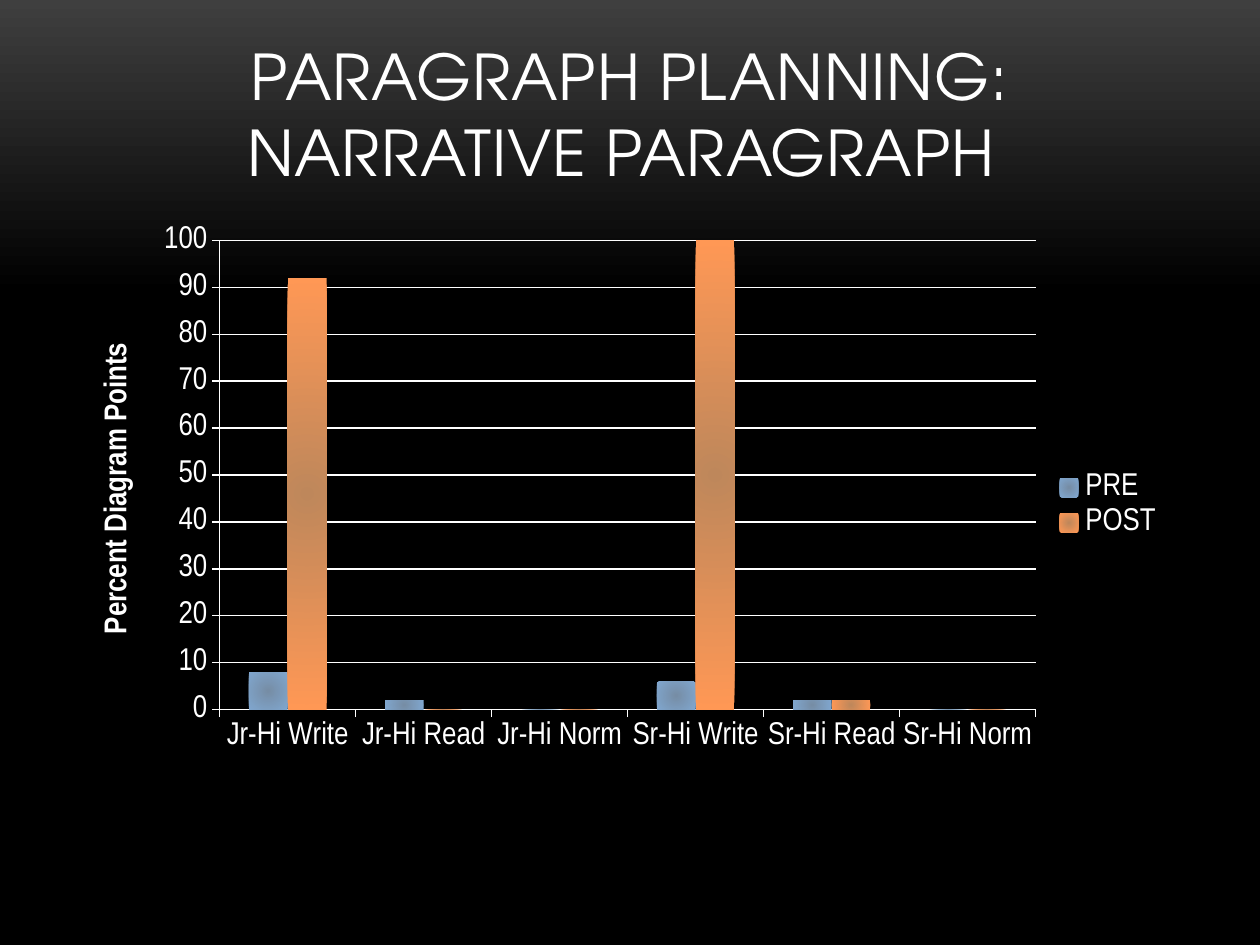
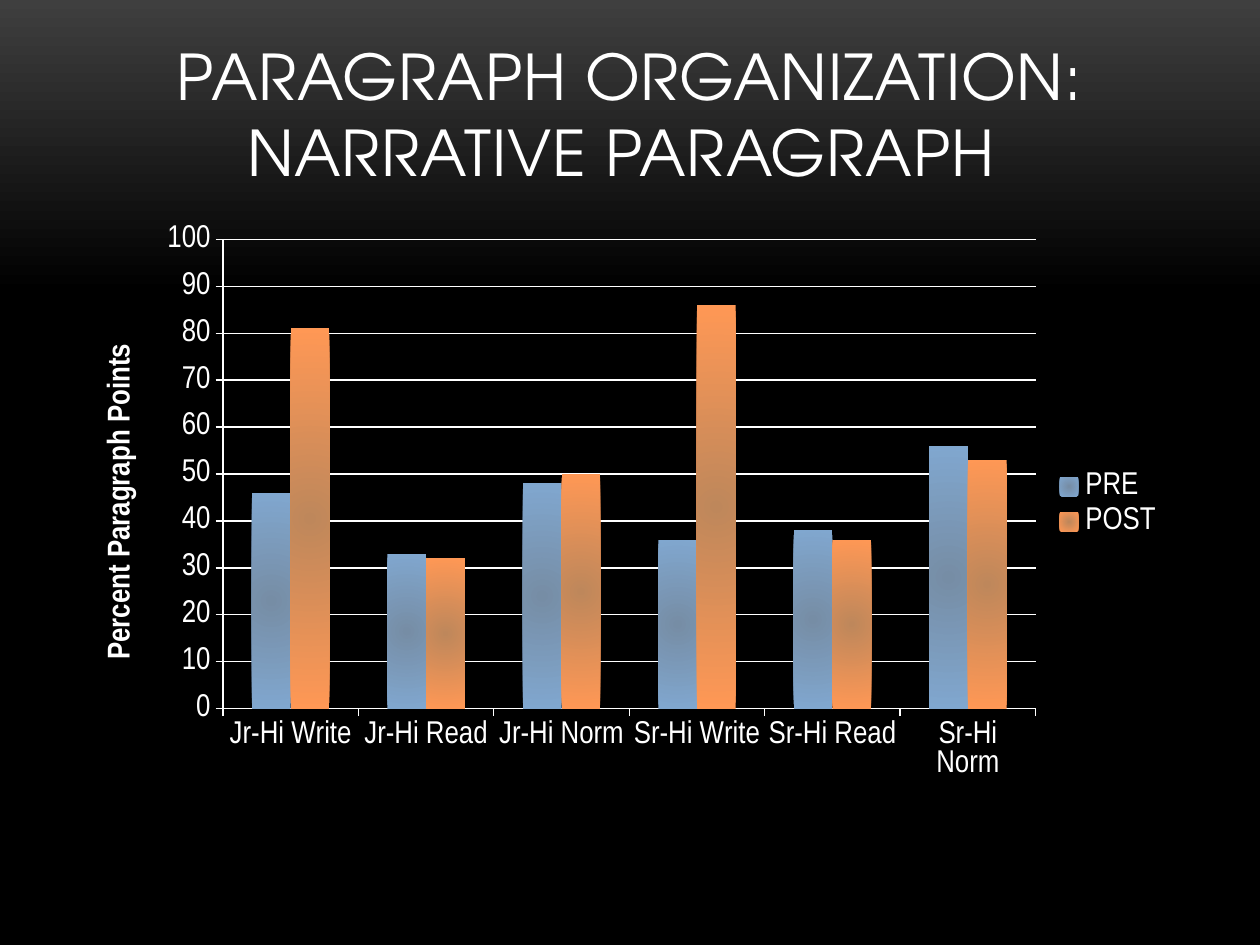
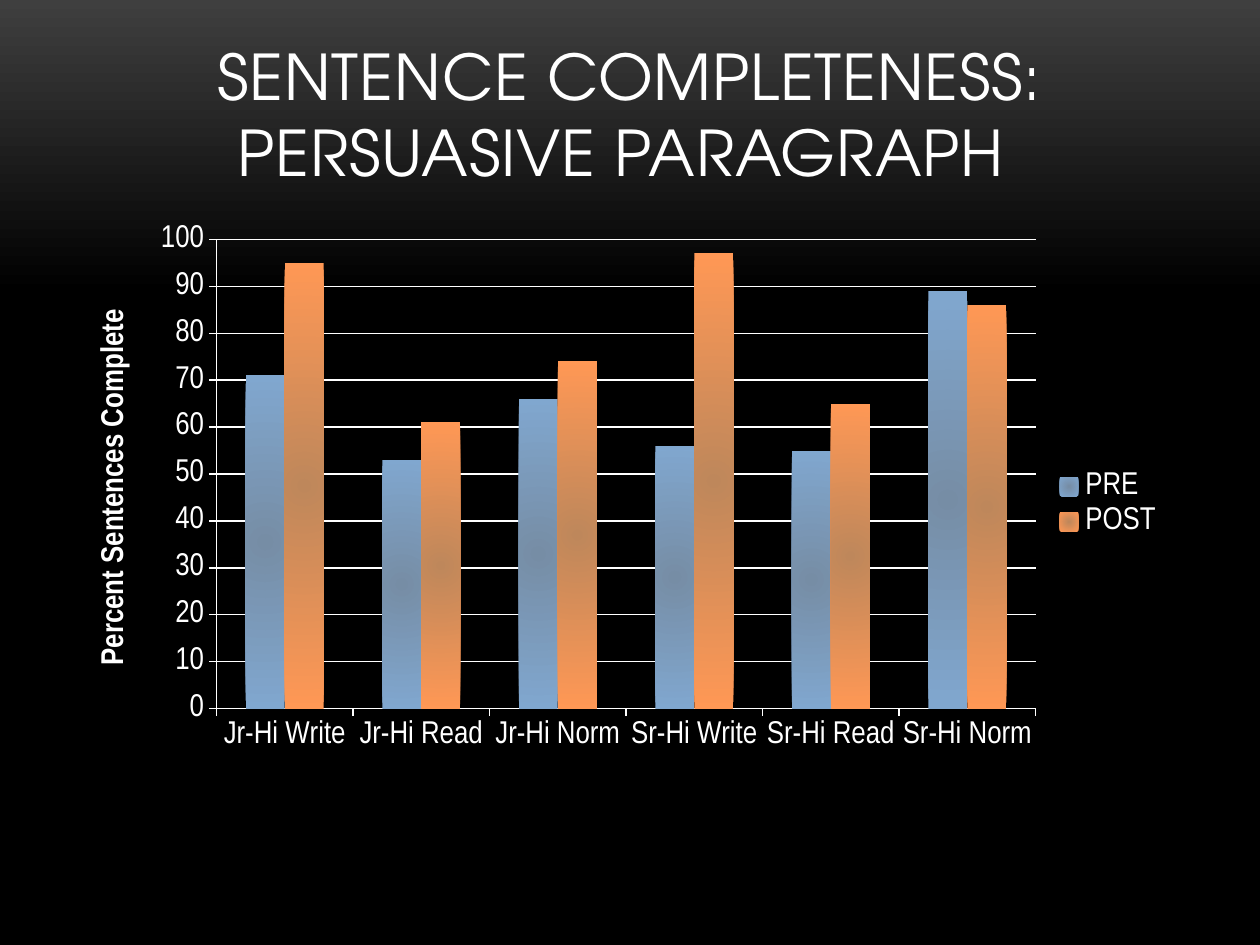
from dataclasses import dataclass

from pptx import Presentation
from pptx.chart.data import CategoryChartData
from pptx.dml.color import RGBColor
from pptx.enum.chart import XL_CHART_TYPE, XL_LEGEND_POSITION, XL_TICK_MARK
from pptx.enum.text import MSO_ANCHOR, PP_ALIGN
from pptx.oxml import parse_xml
from pptx.oxml.ns import nsdecls
from pptx.util import Cm, Pt


@dataclass(frozen=True)
class Theme:
    white: RGBColor = RGBColor(0xFF, 0xFF, 0xFF)
    gray: RGBColor = RGBColor(0x3F, 0x3F, 0x3F)
    black: RGBColor = RGBColor(0, 0, 0)
    # Centre and edge of each bar's radial fill
    pre: tuple = (RGBColor(0x76, 0x8D, 0xA5), RGBColor(0x80, 0xA7, 0xCF))
    post: tuple = (RGBColor(0xBE, 0x87, 0x5B), RGBColor(0xFF, 0x98, 0x55))
    head: str = "TeX Gyre Adventor"
    body: str = "Arial Narrow"
    big: Pt = Pt(36)
    small: Pt = Pt(18)
    line: Pt = Pt(0.75)


theme = Theme()
cats = [f"{school} {task}" for school in ("Jr-Hi", "Sr-Hi")
        for task in ("Write", "Read", "Norm")]

# Title, axis title, chart top, plot left and width (shares), values
pages = [
    ("PARAGRAPH PLANNING:\nNARRATIVE PARAGRAPH ", "Percent Diagram Points",
     4.47, 0.124, 0.747, (8, 2, 0, 6, 2, 0), (92, 0, 0, 100, 2, 0)),
    ("PARAGRAPH ORGANIZATION:\nNARRATIVE PARAGRAPH ", "Percent Paragraph Points",
     4.45, 0.127, 0.744, (46, 33, 48, 36, 38, 56), (81, 32, 50, 86, 36, 53)),
    ("SENTENCE COMPLETENESS:\nPERSUASIVE PARAGRAPH ", "Percent Sentences Complete",
     4.45, 0.121, 0.75, (71, 53, 66, 56, 55, 89), (95, 61, 74, 97, 65, 86)),
]


def write(frame, text, font, size, bold=False, track=0):
    """Fill a text frame with one centred paragraph; track is in 1/100 pt."""
    para = frame.paragraphs[0]
    para.text = text
    para.alignment = PP_ALIGN.CENTER
    for run in para.runs:
        run.font.name = font
        run.font.size = size
        run.font.bold = bold
        run.font.color.rgb = theme.white
        if track:
            run.font._element.set("spc", str(track))


def shade(fill, first, last):
    fill.gradient()
    for stop, color in zip(fill.gradient_stops, (first, last)):
        stop.color.rgb = color


deck = Presentation()
deck.slide_width, deck.slide_height = Cm(25.4), Cm(19.05)

back = deck.slide_master.background.fill
shade(back, theme.gray, theme.black)
back.gradient_angle = 270
back.gradient_stops[1].position = 0.31

for title, label, top, left, width, pre, post in pages:
    slide = deck.slides.add_slide(deck.slide_layouts[6])

    frame = slide.shapes.add_textbox(Cm(1.7), Cm(0.76), Cm(22.02), Cm(3.18)).text_frame
    frame.word_wrap = True
    frame.vertical_anchor = MSO_ANCHOR.BOTTOM
    write(frame, title, theme.head, theme.big, track=50)

    data = CategoryChartData()
    data.categories = cats
    data.add_series("PRE", pre)
    data.add_series("POST", post)
    chart = slide.shapes.add_chart(XL_CHART_TYPE.COLUMN_CLUSTERED, Cm(1.7), Cm(top),
                                   Cm(22.02), Cm(11.43), data).chart
    chart.has_title = False
    chart.font.name = theme.body
    chart.font.size = theme.small
    chart.font.color.rgb = theme.white
    chart.has_legend = True
    chart.legend.position = XL_LEGEND_POSITION.RIGHT
    chart.legend.include_in_layout = False

    plot = chart.plots[0]
    plot.gap_width = 150
    plot.overlap = 0
    plot.vary_by_categories = False
    for bars, colors in zip(plot.series, (theme.pre, theme.post)):
        shade(bars.format.fill, *colors)
        bars.invert_if_negative = False
    for lin in chart.element.xpath(".//c:ser//a:lin"):
        lin.getparent().replace(lin, parse_xml(
            f'<a:path {nsdecls("a")} path="circle">'
            '<a:fillToRect l="50000" t="50000" r="50000" b="50000"/></a:path>'))

    scale = chart.value_axis
    scale.minimum_scale, scale.maximum_scale, scale.major_unit = 0, 100, 10
    scale.has_major_gridlines = True
    write(scale.axis_title.text_frame, label, theme.body, theme.small, bold=True)
    for axis in (scale, chart.category_axis):
        axis.major_tick_mark = XL_TICK_MARK.OUTSIDE
    for item in (scale, chart.category_axis, scale.major_gridlines):
        item.format.line.color.rgb = theme.white
        item.format.line.width = theme.line

    area = chart.element.xpath(".//c:plotArea")[0]
    for old in area.xpath("c:layout"):
        area.remove(old)
    sizes = "".join(f'<c:{key} val="{val}"/>' for key, val in
                    (("x", left), ("y", 0.033), ("w", width), ("h", 0.828)))
    area.insert(0, parse_xml(
        f'<c:layout {nsdecls("c")}><c:manualLayout><c:layoutTarget val="inner"/>'
        f'<c:xMode val="edge"/><c:yMode val="edge"/>{sizes}</c:manualLayout></c:layout>'))

deck.save("out.pptx")
